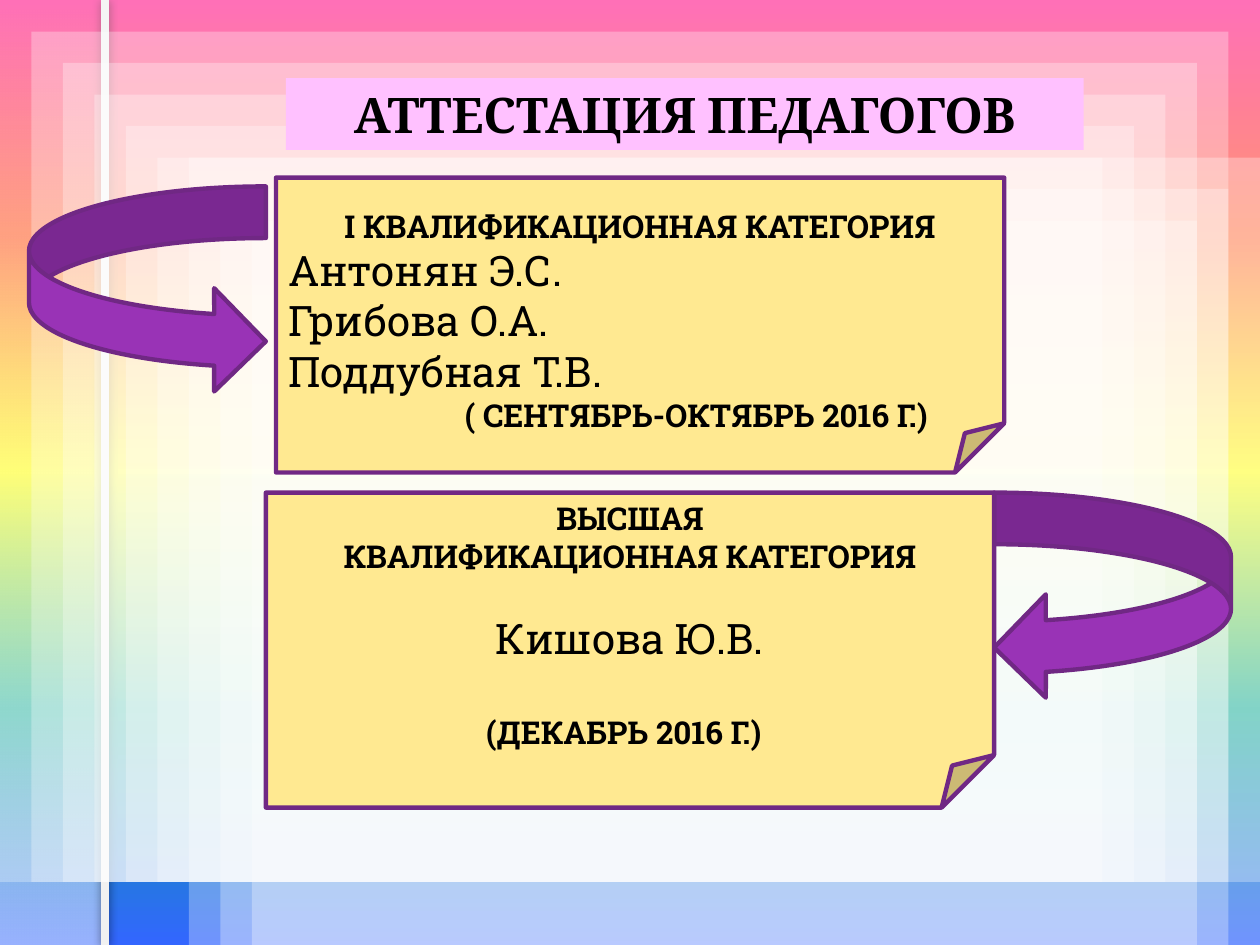
"""Build a slide on teacher certification with two folded notes on a rainbow background."""
from lxml.etree import SubElement
from pptx import Presentation
from pptx.dml.color import RGBColor
from pptx.enum.shapes import MSO_CONNECTOR, MSO_SHAPE
from pptx.enum.text import MSO_ANCHOR, PP_ALIGN
from pptx.oxml.ns import qn
from pptx.util import Inches, Pt

WIDTH, HEIGHT, STEP = 10, 7.5, 0.25
RAINBOW = [(0, "FF3399", 100), (25, "FF6633", 100), (50, "FFFF00", 100),
           (75, "01A78F", 100), (100, "3366FF", 100)]
FADE = [(0, "FFFFFF", 50), (100, "FFFFFF", 0)]
PURPLE, OUTLINE, PAPER, PINK = "9933B6", "702884", "FFE991", "FFC1FF"

TITLE = ("АТТЕСТАЦИЯ ПЕДАГОГОВ", 28, True, 0, None)
NOTES = [
    {"area": (2.19, 1.41, 5.78, 2.34), "top": 0.23, "lines": [
        ("I КВАЛИФИКАЦИОННАЯ КАТЕГОРИЯ", 18, True, 0, None),
        ("Антонян Э.С.", 24, False, 0, 0),
        ("Грибова О.А.", 24, False, 0, 0),
        ("Поддубная Т.В.", 24, False, 0, 0),
        ("( СЕНТЯБРЬ-ОКТЯБРЬ 2016 Г.)", 18, True, 0, 1.4)]},
    {"area": (2.11, 3.91, 5.78, 2.5), "top": 0.05, "lines": [
        ("ВЫСШАЯ", 18, True, 0, None),
        ("КВАЛИФИКАЦИОННАЯ КАТЕГОРИЯ", 18, True, 0, None),
        ("Кишова Ю.В.", 24, False, 21.6, None),
        ("(ДЕКАБРЬ 2016 Г.)", 18, True, 28.8, 1.65)]},
]
ARROWS = [(MSO_SHAPE.CURVED_RIGHT_ARROW, (0.23, 1.48, 1.88, 1.64)),
          (MSO_SHAPE.CURVED_LEFT_ARROW, (7.89, 3.91, 1.88, 1.64))]


def color(value):
    return RGBColor.from_string(value)


def add_color(parent, value, opacity):
    element = SubElement(parent, qn("a:srgbClr"), val=value)
    if opacity < 100:
        SubElement(element, qn("a:alpha"), val=str(opacity * 1000))


def set_gradient(owner, fill, stops, angle):
    fill.gradient()
    fill.gradient_angle = angle
    stop_list = next(owner.iter(qn("a:gsLst")))
    for old in list(stop_list):
        stop_list.remove(old)
    for position, value, opacity in stops:
        stop = SubElement(stop_list, qn("a:gs"), pos=str(position * 1000))
        add_color(stop, value, opacity)


def add_block(page, kind, area, fill=None, line=None, opacity=100):
    shape = page.shapes.add_shape(kind, *map(Inches, area))
    shape.shadow.inherit = False
    if fill:
        shape.fill.solid()
        shape.fill.fore_color.rgb = color(fill)
        if opacity < 100:
            value = next(shape.fill._xPr.iter(qn("a:srgbClr")))
            SubElement(value, qn("a:alpha"), val=str(opacity * 1000))
    if line:
        shape.line.color.rgb = color(line)
        shape.line.width = Pt(2.5)
    else:
        shape.line.fill.background()
    return shape


def add_veils(page, insets):
    for left, top, right, bottom in insets:
        area = (left, top, right - left, bottom - top)
        add_block(page, MSO_SHAPE.RECTANGLE, area, "FFFFFF", opacity=30)


def add_rail(page):
    x = Inches(0.83)
    rail = page.shapes.add_connector(MSO_CONNECTOR.STRAIGHT, x, 0, x, Inches(HEIGHT))
    rail.line.color.rgb = color("F1F1F1")
    rail.line.width = Pt(4.5)
    effects = SubElement(rail._element.spPr, qn("a:effectLst"))
    shadow = SubElement(effects, qn("a:outerShdw"), blurRad=str(Pt(5)), dist="0", dir="0")
    add_color(shadow, "000000", 40)


def write(shape, lines, font, anchor):
    frame = shape.text_frame
    frame.word_wrap = True
    frame.vertical_anchor = anchor
    for index, (text, size, bold, gap, indent) in enumerate(lines):
        para = frame.add_paragraph() if index else frame.paragraphs[0]
        para.text = text
        para.font.name, para.font.size, para.font.bold = font, Pt(size), bold
        para.font.color.rgb = color("000000")
        para.space_before = Pt(gap)
        para.alignment = PP_ALIGN.CENTER if indent is None else PP_ALIGN.LEFT
        if indent:
            para._p.get_or_add_pPr().set("marL", str(Inches(indent)))


def main():
    deck = Presentation()
    deck.slide_width, deck.slide_height = Inches(WIDTH), Inches(HEIGHT)
    page = deck.slides.add_slide(deck.slide_layouts[6])
    set_gradient(page._element, page.background.fill, RAINBOW, 270)

    add_veils(page, [(1.5 + n * STEP, 1.25 + n * STEP, WIDTH - n * STEP, HEIGHT)
                     for n in range(3)])
    strip = add_block(page, MSO_SHAPE.RECTANGLE, (0, 0, 0.85, HEIGHT))
    set_gradient(strip._element, strip.fill, FADE, 90)
    add_rail(page)
    add_veils(page, [(n * STEP, n * STEP, WIDTH - n * STEP, 7) for n in range(6)])

    title = add_block(page, MSO_SHAPE.RECTANGLE, (2.27, 0.62, 6.33, 0.57), PINK)
    write(title, [TITLE], "Cambria", MSO_ANCHOR.MIDDLE)
    for (kind, area), note in zip(ARROWS, NOTES):
        add_block(page, kind, area, PURPLE, OUTLINE)
        paper = add_block(page, MSO_SHAPE.FOLDED_CORNER, note["area"], PAPER, OUTLINE)
        paper.text_frame.margin_top = Inches(note["top"])
        write(paper, note["lines"], "Roboto Slab", MSO_ANCHOR.TOP)
    deck.save("out.pptx")


if __name__ == "__main__":
    main()
